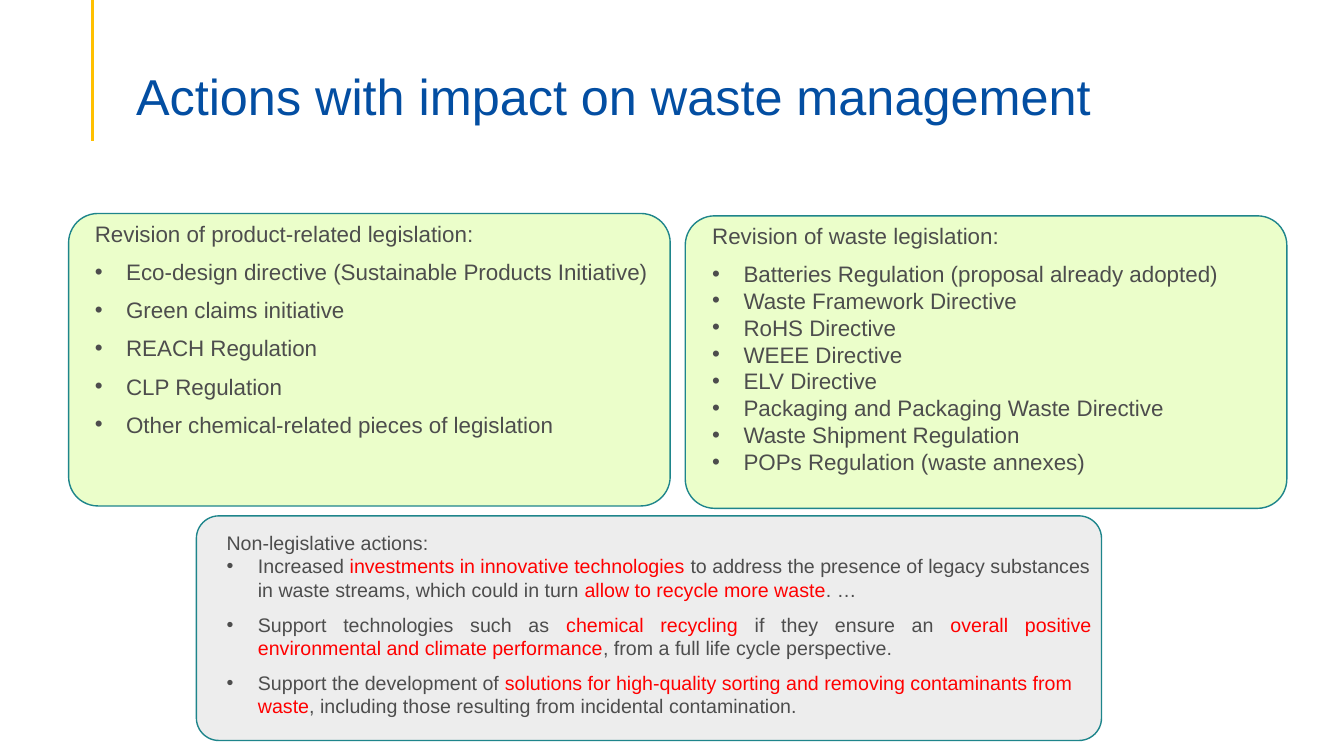
from lxml.etree import SubElement
from pptx import Presentation
from pptx.dml.color import RGBColor
from pptx.enum.shapes import MSO_CONNECTOR, MSO_SHAPE
from pptx.enum.text import MSO_ANCHOR, PP_ALIGN
from pptx.oxml.ns import qn
from pptx.util import Cm, Pt

COLORS = {
    "title": "034EA2",
    "accent": "FFC000",
    "text": "4D4D4D",
    "mark": "FF0000",
    "border": "1E858B",
    "green": "EBFECA",
    "grey": "EDEDED",
}
FONT = "Arial"

PRODUCT = [
    "Revision of product-related legislation:",
    "Eco-design directive (Sustainable Products Initiative)",
    "Green claims initiative",
    "REACH Regulation",
    "CLP Regulation",
    "Other chemical-related pieces of legislation",
]
WASTE = [
    "Revision of waste legislation:",
    "Batteries Regulation (proposal already adopted)",
    "Waste Framework Directive",
    "RoHS Directive",
    "WEEE Directive",
    "ELV Directive",
    "Packaging and Packaging Waste Directive",
    "Waste Shipment Regulation",
    "POPs Regulation (waste annexes)",
]
# Words between bars are set in the mark colour
OTHER = [
    "Non-legislative actions:",
    "Increased |investments in innovative technologies |to address the presence "
    "of legacy substances in waste streams, which could in turn "
    "|allow to recycle more waste|. …",
    "Support technologies such as |chemical recycling |if they ensure an"
    "| overall positive environmental and climate performance"
    "|, from a full life cycle perspective.",
    "Support the development of |solutions for high-quality sorting and removing "
    "contaminants from waste|, including those resulting from incidental "
    "contamination.",
]


def color(name):
    return RGBColor.from_string(COLORS[name])


def style(run, size, name):
    run.font.name = FONT
    run.font.size = Pt(size)
    run.font.color.rgb = color(name)


def bullet(para):
    props = para._p.get_or_add_pPr()
    props.set("marL", str(Cm(0.79)))
    props.set("indent", str(-Cm(0.79)))
    SubElement(props, qn("a:buFont")).set("typeface", FONT)
    SubElement(props, qn("a:buChar")).set("char", "•")


def add_frame(slide, x, y, w, h):
    frame = slide.shapes.add_textbox(Cm(x), Cm(y), Cm(w), Cm(h)).text_frame
    frame.word_wrap = True
    frame.vertical_anchor = MSO_ANCHOR.TOP
    return frame


def add_title(slide, x, y, w, h):
    # Accent line to the left of the title
    line = slide.shapes.add_connector(
        MSO_CONNECTOR.STRAIGHT, Cm(x - 0.84), Cm(0), Cm(x - 0.84), Cm(3.56))
    line.line.color.rgb = color("accent")
    line.line.width = Pt(2.25)
    SubElement(line._element.spPr, qn("a:effectLst"))

    # Title text
    frame = add_frame(slide, x, y, w, h)
    frame.margin_bottom = 0
    frame.text = "Actions with impact on waste management"
    para = frame.paragraphs[0]
    para.line_spacing = 0.9
    style(para.runs[0], 36, "title")


def add_panel(slide, box, fill, inset, size, items, head_gap, gap):
    # Rounded card
    x, y, w, h = box
    card = slide.shapes.add_shape(
        MSO_SHAPE.ROUNDED_RECTANGLE, Cm(x), Cm(y), Cm(w), Cm(h))
    card.adjustments[0] = 0.1
    card.shadow.inherit = False
    card.fill.solid()
    card.fill.fore_color.rgb = color(fill)
    card.line.color.rgb = color("border")
    card.line.width = Pt(1)

    # Heading and bullets
    left, top, right = inset
    frame = add_frame(slide, x + left, y + top, w - left - right, h)
    for i, item in enumerate(items):
        para = frame.add_paragraph() if i else frame.paragraphs[0]
        para.space_after = Pt(gap if i else head_gap)
        if i:
            bullet(para)
        for j, part in enumerate(item.split("|")):
            run = para.add_run()
            run.text = part
            style(run, size, "mark" if j % 2 else "text")
    return frame


def main():
    deck = Presentation()
    deck.slide_width = Cm(33.87)
    deck.slide_height = Cm(19.05)
    slide = deck.slides.add_slide(deck.slide_layouts[6])

    add_title(slide, 3.18, 1.7, 28.22, 3.76)
    add_panel(slide, (1.73, 5.38, 15.16, 7.37), "green",
              (0.41, 0.05, 0.22), 16, PRODUCT, 8, 8)
    frame = add_panel(slide, (4.95, 13, 22.81, 5.66), "grey",
                      (0.51, 0.25, 0), 14, OTHER, 0, 8)
    frame.paragraphs[2].alignment = PP_ALIGN.JUSTIFY
    add_panel(slide, (17.27, 5.44, 15.16, 7.37), "green",
              (0.43, 0.03, 0.2), 16, WASTE, 8, 0)

    deck.save("out.pptx")


if __name__ == "__main__":
    main()
